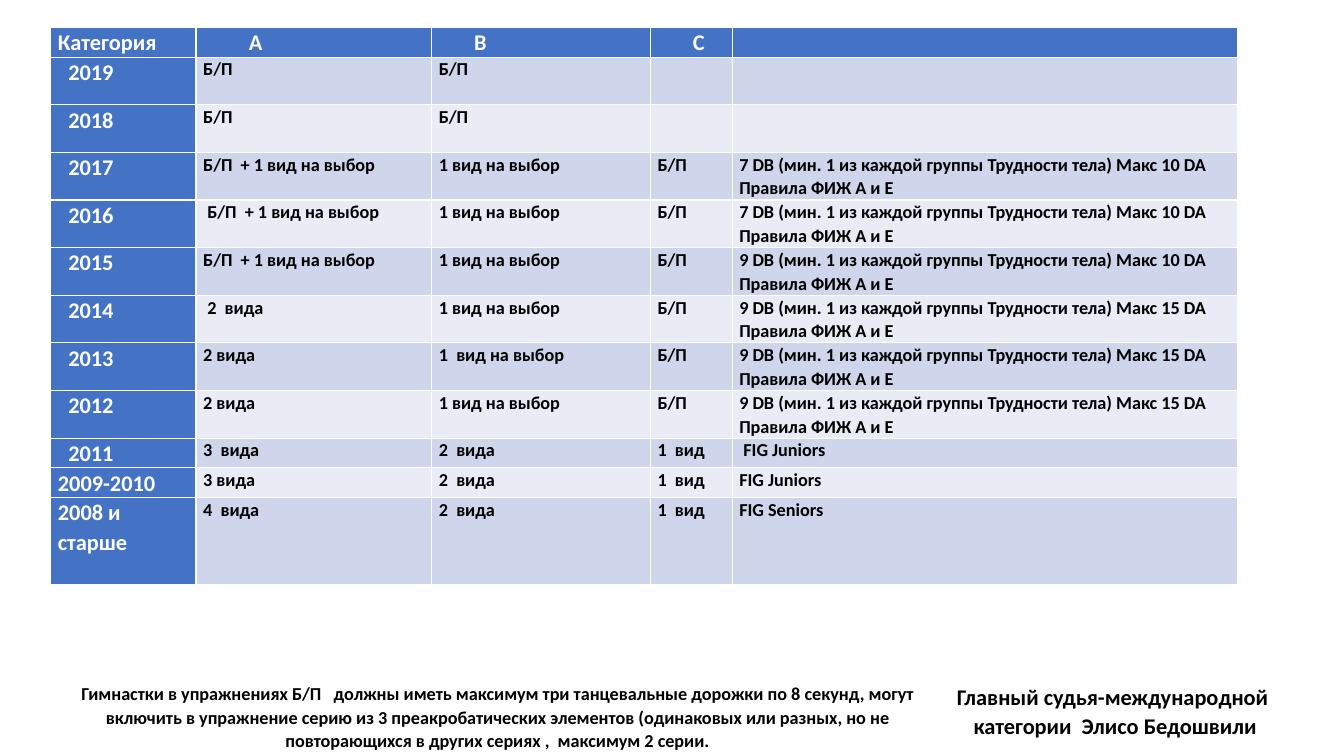
import pptx
import pptx.util
import pptx.dml.color
import pptx.enum.text

Cm = pptx.util.Cm
Pt = pptx.util.Pt

COLORS = {"head": "4472C4", "odd": "CFD5EA", "even": "E9EBF5",
          "light": "FFFFFF", "dark": "000000"}
FONT = "Calibri"
LINE_SPACING = 1.07

COLUMN_WIDTHS = [3.66, 5.94, 5.51, 2.06, 12.75]
ROW_HEIGHTS = [0.75] + [1.2] * 8 + [0.75, 0.75, 2.2]
CELL_MARGIN = 0.18
HEADER_INDENTS = [0, 1.15, 0.89, 0.89, 0]
YEAR_INDENT = 0.26

BODY_TEXT = "{} DB (мин. 1 из каждой группы Трудности тела) Макс {} DA Правила ФИЖ A и E"
CHOICE = "1 вид на выбор"
CATEGORIES = [
    ("Категория", "A", "B", "C", ""),
    ("2019", "Б/П", "Б/П", "", ""),
    ("2018", "Б/П", "Б/П", "", ""),
    ("2017", "Б/П  + 1 вид на выбор", CHOICE, "Б/П", BODY_TEXT.format(7, 10)),
    ("2016", " Б/П  + 1 вид на выбор", CHOICE, "Б/П", BODY_TEXT.format(7, 10)),
    ("2015", "Б/П  + 1 вид на выбор", CHOICE, "Б/П", BODY_TEXT.format(9, 10)),
    ("2014", " 2  вида", CHOICE, "Б/П", BODY_TEXT.format(9, 15)),
    ("2013", "2 вида", "1  вид на выбор", "Б/П", BODY_TEXT.format(9, 15)),
    ("2012", "2 вида", CHOICE, "Б/П", BODY_TEXT.format(9, 15)),
    ("2011", "3  вида", "2  вида", "1  вид", " FIG Juniors"),
    ("2009-2010", "3 вида", "2  вида", "1  вид", "FIG Juniors"),
    ("2008 и старше", "4  вида", "2  вида", "1  вид", "FIG Seniors"),
]
ROUTINE_RULE = (
    "Гимнастки в упражнениях Б/П   должны иметь максимум три танцевальные дорожки "
    "по 8 секунд, могут включить в упражнение серию из 3 преакробатических элементов "
    "(одинаковых или разных, но не повторающихся в других сериях ,  максимум 2 серии.")
CHIEF_JUDGE = "Главный судья-международной  категории  Элисо Бедошвили"


def rgb(name):
    return pptx.dml.color.RGBColor.from_string(COLORS[name])


def format_paragraph(paragraph, size, color):
    paragraph.line_spacing = LINE_SPACING
    paragraph.font.name = FONT
    paragraph.font.size = Pt(size)
    paragraph.font.bold = True
    paragraph.font.color.rgb = rgb(color)


def cell_indent(row, column, text):
    if row == 0:
        return HEADER_INDENTS[column]
    return YEAR_INDENT if column == 0 and len(text) == 4 else 0


def add_category_table(slide, left, top):
    """Categories by birth year, with the programme of levels A, B and C."""
    categories = slide.shapes.add_table(
        len(CATEGORIES), len(COLUMN_WIDTHS), Cm(left), Cm(top),
        Cm(sum(COLUMN_WIDTHS)), Cm(sum(ROW_HEIGHTS))).table
    categories.first_col = True
    for column, width in zip(categories.columns, COLUMN_WIDTHS):
        column.width = Cm(width)
    for row, height in zip(categories.rows, ROW_HEIGHTS):
        row.height = Cm(height)

    for r, texts in enumerate(CATEGORIES):
        for c, text in enumerate(texts):
            cell = categories.cell(r, c)
            is_head = r == 0 or c == 0
            cell.fill.solid()
            cell.fill.fore_color.rgb = rgb("head" if is_head else "odd" if r % 2 else "even")
            cell.margin_left = Cm(CELL_MARGIN + cell_indent(r, c, text))
            cell.margin_right = Cm(CELL_MARGIN)
            cell.margin_top = cell.margin_bottom = 0
            cell.text = text
            format_paragraph(cell.text_frame.paragraphs[0], 16 if is_head else 13,
                             "light" if is_head else "dark")


def add_note(slide, left, top, width, height, text, size):
    """Centred note below the table."""
    frame = slide.shapes.add_textbox(Cm(left), Cm(top), Cm(width), Cm(height)).text_frame
    frame.word_wrap = True
    frame.text = text
    note = frame.paragraphs[0]
    note.alignment = pptx.enum.text.PP_ALIGN.CENTER
    note.space_after = Pt(8)
    format_paragraph(note, size, "dark")


def main():
    deck = pptx.Presentation()
    deck.slide_width, deck.slide_height = Cm(33.87), Cm(19.05)
    slide = deck.slides.add_slide(deck.slide_layouts[6])
    add_category_table(slide, 1.28, 0.69)
    # Notes
    add_note(slide, 23.62, 17.04, 8.97, 1.68, CHIEF_JUDGE, 16)
    add_note(slide, 1.28, 17.04, 22.5, 2.01, ROUTINE_RULE, 13)
    deck.save("out.pptx")


if __name__ == "__main__":
    main()
